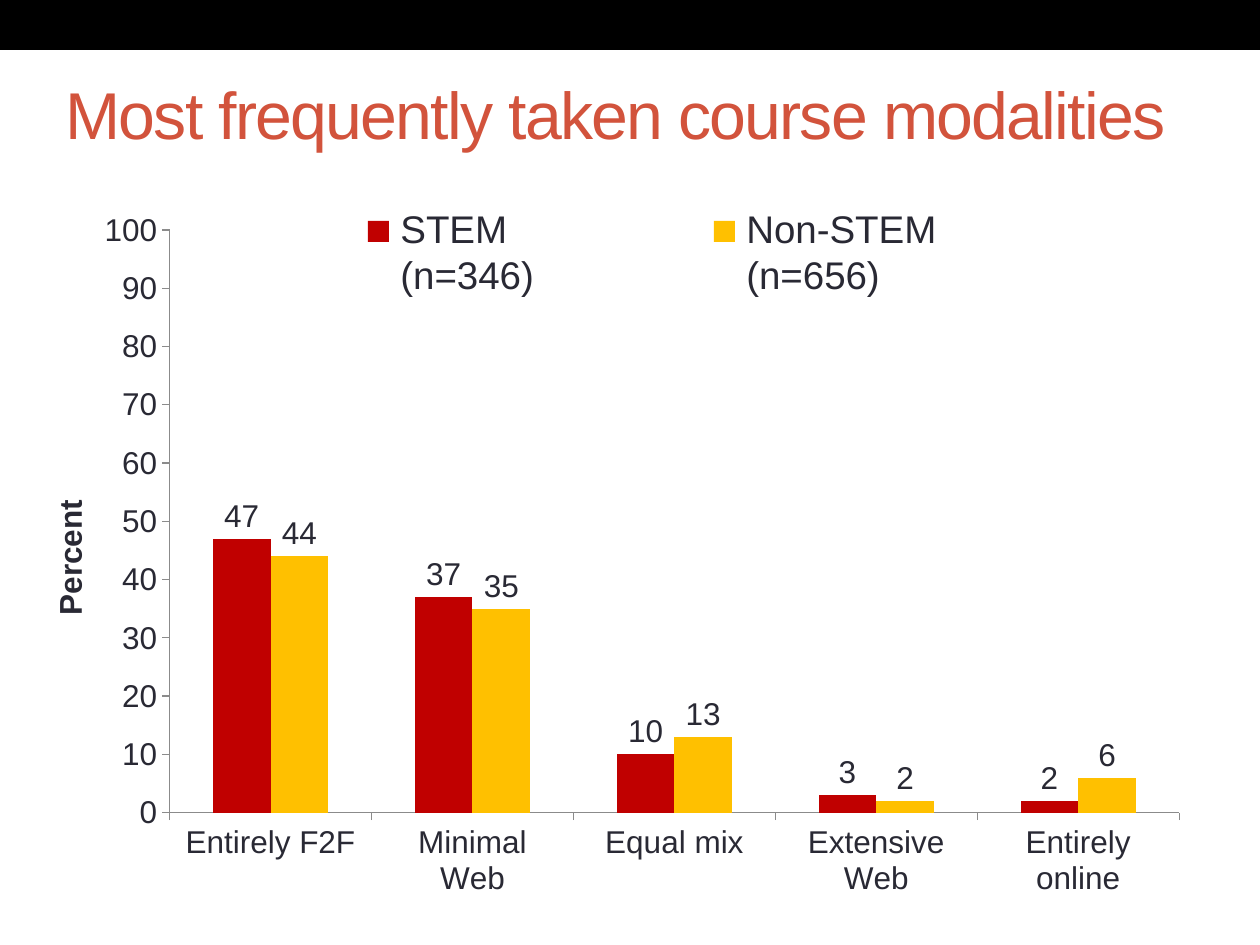
"""Build a slide comparing course modalities of STEM and non-STEM students."""
from lxml import etree
from pptx import Presentation
from pptx import util as u
from pptx.chart import data
from pptx.dml.color import RGBColor
from pptx.enum import chart as ch, shapes, text
from pptx.oxml import ns

TITLE = "Most frequently taken course modalities"
CATEGORIES = ["Entirely F2F", "Minimal\nWeb", "Equal mix", "Extensive Web", "Entirely online"]
SERIES = [
    dict(name="Series 1", values=[47, 37, 10, 3, 2], color="C00000",
         key=["STEM", "(n=346)"], left=368, width=346),
    dict(name="Series 2", values=[44, 35, 13, 2, 6], color="FFC000",
         key=["Non-STEM", "(n=656)"], left=714, width=378),
]
THEME = dict(font="Arial", title="D2533C", ink="292934", band="000000", axis="8B8B8B",
             title_size=37.8, key_size=22, chart_size=18)
PLOT = dict(layoutTarget="inner", xMode="edge", yMode="edge", x=0.118, y=0.04, w=0.866, h=0.75)
AXIS_TITLE = dict(xMode="edge", yMode="edge", x=0.01, y=0.38)


def px(count):
    return u.Emu(round(count * 914400 / 126))


def box_of(*sides):
    return [px(side) for side in sides]


def style(font, size, color, bold=None):
    font.name = THEME["font"]
    font.size = u.Pt(size)
    font.color.rgb = RGBColor.from_string(color)
    font.bold = bold


def add_block(page, sides, color):
    block = page.shapes.add_shape(shapes.MSO_SHAPE.RECTANGLE, *box_of(*sides))
    block.shadow.inherit = False
    block.fill.solid()
    block.fill.fore_color.rgb = RGBColor.from_string(color)
    block.line.fill.background()


def add_title(page):
    title = page.shapes.title
    title.left, title.top, title.width, title.height = box_of(53, 37, 1207, 152)
    frame = title.text_frame
    frame.auto_size = text.MSO_AUTO_SIZE.NONE
    frame.vertical_anchor = text.MSO_ANCHOR.MIDDLE
    para = frame.paragraphs[0]
    para.alignment = text.PP_ALIGN.LEFT
    span = para.add_run()
    span.text = TITLE
    style(span.font, THEME["title_size"], THEME["title"])
    span.font._element.set("spc", "-100")


def set_layout(parent, index, settings):
    for old in parent.findall(ns.qn("c:layout")):
        parent.remove(old)
    layout = etree.Element(ns.qn("c:layout"))
    manual = etree.SubElement(layout, ns.qn("c:manualLayout"))
    for name, value in settings.items():
        etree.SubElement(manual, ns.qn("c:" + name)).set("val", str(value))
    parent.insert(index, layout)


def add_chart(page):
    table = data.CategoryChartData()
    table.categories = CATEGORIES
    for group in SERIES:
        table.add_series(group["name"], group["values"])
    chart = page.shapes.add_chart(ch.XL_CHART_TYPE.COLUMN_CLUSTERED,
                                  *box_of(32, 199, 1166, 777), table).chart
    size, ink = THEME["chart_size"], THEME["ink"]
    style(chart.font, size, ink)
    chart.has_title = False
    chart.has_legend = False
    set_layout(chart._chartSpace.chart.plotArea, 0, PLOT)

    plot = chart.plots[0]
    plot.gap_width, plot.overlap = 150, 0
    plot.vary_by_categories = False
    for group, bars in zip(SERIES, plot.series):
        bars.format.fill.solid()
        bars.format.fill.fore_color.rgb = RGBColor.from_string(group["color"])
        labels = bars.data_labels
        labels.show_value = True
        labels.position = ch.XL_LABEL_POSITION.OUTSIDE_END
        style(labels.font, size, ink)

    for axis in (chart.category_axis, chart.value_axis):
        axis.has_major_gridlines = False
        axis.major_tick_mark = ch.XL_TICK_MARK.OUTSIDE
        axis.minor_tick_mark = ch.XL_TICK_MARK.NONE
        axis.format.line.color.rgb = RGBColor.from_string(THEME["axis"])
        style(axis.tick_labels.font, size, ink)
    scale = chart.value_axis
    scale.minimum_scale, scale.maximum_scale, scale.major_unit = 0, 100, 10
    span = scale.axis_title.text_frame.paragraphs[0].add_run()
    span.text = "Percent"
    style(span.font, size, ink, bold=True)
    set_layout(scale.axis_title._element, 1, AXIS_TITLE)


def add_key(page, group):
    add_block(page, (group["left"], 221, 21, 21), group["color"])
    box = page.shapes.add_textbox(*box_of(group["left"] + 20, 199, group["width"], 63))
    frame = box.text_frame
    frame.word_wrap = True
    for index, line in enumerate(group["key"]):
        para = frame.add_paragraph() if index else frame.paragraphs[0]
        span = para.add_run()
        span.text = line
        style(span.font, THEME["key_size"], THEME["ink"])


def main():
    deck = Presentation()
    deck.slide_width, deck.slide_height = box_of(1260, 945)
    page = deck.slides.add_slide(deck.slide_layouts[5])
    add_block(page, (0, 0, 1260, 50), THEME["band"])
    add_title(page)
    add_chart(page)
    for group in SERIES:
        add_key(page, group)
    deck.save("out.pptx")


if __name__ == "__main__":
    main()
